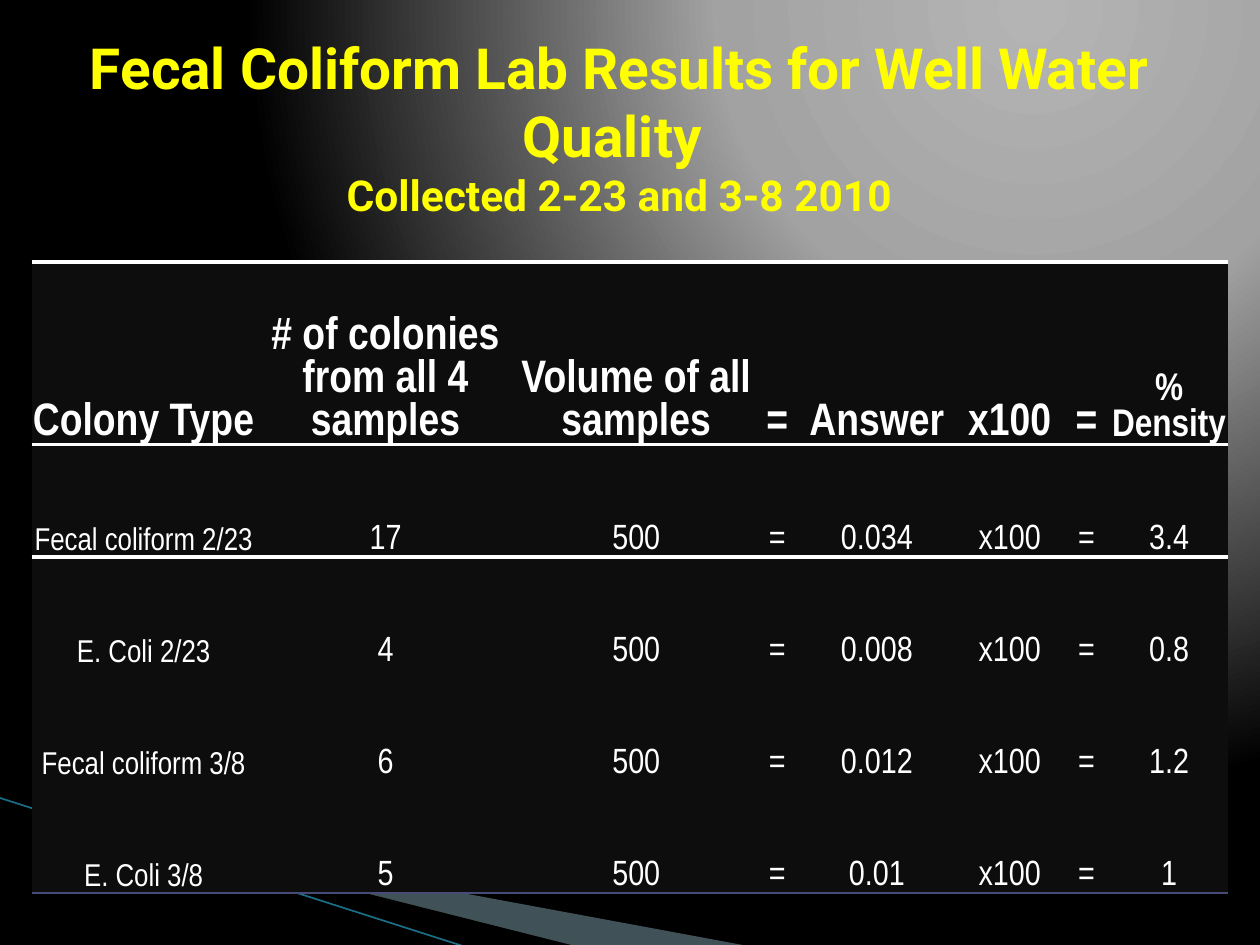
import pptx
import pptx.dml.color
import pptx.enum.text
import pptx.oxml
import pptx.oxml.ns
import pptx.util
from dataclasses import dataclass
from lxml import etree
from pptx.util import Inches


@dataclass(frozen=True)
class Theme:
    title: str = "FFFF00"
    text: str = "FFFFFF"
    cell: str = "0D0D0D"
    table_edge: str = "474B78"
    swoosh: str = "A0CBDC"
    shade: str = "000000"
    thin_line: str = "1A6F86"
    title_font: str = "Roboto"
    table_font: str = "Arial Narrow"
    title_size: float = 32.4
    subtitle_size: float = 24.3
    header_size: int = 26
    density_size: int = 22
    label_size: int = 18
    value_size: int = 20


theme = Theme()
rgb = pptx.dml.color.RGBColor.from_string
qn = pptx.oxml.ns.qn
NAMESPACE = pptx.oxml.ns.nsdecls("a")


def set_border(cell, side, line):
    """Draw one side (L, R, T or B) as (colour, points), or hide it if line is None."""
    if line:
        color, points = line
        width = pptx.util.Pt(points)
        fill = f'<a:solidFill><a:srgbClr val="{color}"/></a:solidFill>'
    else:
        width, fill = 0, "<a:noFill/>"
    return pptx.oxml.parse_xml(f'<a:ln{side} {NAMESPACE} w="{width}">{fill}</a:ln{side}>')


presentation = pptx.Presentation()
presentation.slide_width = Inches(10)
presentation.slide_height = Inches(7.5)
slide = presentation.slides.add_slide(presentation.slide_layouts[6])

# Background: radial gradient centred near the top right
slide.background.fill.gradient()
gradient = slide.background.fill._fill._gradFill
for child in list(gradient):
    gradient.remove(child)
stops = etree.SubElement(gradient, qn("a:gsLst"))
for percent, color in [(0, "B4B4B4"), (40, "A2A2A2"), (100, "000000")]:
    stop = etree.SubElement(stops, qn("a:gs"), pos=str(percent * 1000))
    etree.SubElement(stop, qn("a:srgbClr"), val=color)
focus = etree.SubElement(gradient, qn("a:path"), {"path": "circle"})
etree.SubElement(focus, qn("a:fillToRect"), l="65000", t="0", r="0", b="98000")

# Swooshes in the bottom left corner
swooshes = [
    ([(0.55, 6.51), (5.95, 7.51), (4.56, 7.51), (0.55, 6.5)], theme.swoosh, 40),
    ([(0.53, 6.49), (4.57, 7.51), (3.72, 7.52), (0.54, 6.5)], theme.shade, 100),
]
for points, color, opacity in swooshes:
    corners = [(Inches(x), Inches(y)) for x, y in points]
    builder = slide.shapes.build_freeform(*corners[0])
    builder.add_line_segments(corners[1:], close=True)
    shape = builder.convert_to_shape()
    shape.shadow.inherit = False
    shape.fill.solid()
    shape.fill.fore_color.rgb = rgb(color)
    shape.line.fill.background()
    if opacity < 100:
        swatch = shape._element.spPr.find(".//" + qn("a:srgbClr"))
        etree.SubElement(swatch, qn("a:alpha"), val=str(opacity * 1000))

connector = slide.shapes.add_connector(
    pptx.enum.shapes.MSO_CONNECTOR.STRAIGHT,
    Inches(-0.01), Inches(6.33), Inches(3.71), Inches(7.52))
connector.line.color.rgb = rgb(theme.thin_line)
connector.line.width = pptx.util.Pt(0.95)
etree.SubElement(connector._element.spPr, qn("a:effectLst"))

# Title
title = slide.shapes.add_textbox(Inches(0.33), Inches(0.25), Inches(9.17), Inches(1.5))
frame = title.text_frame
frame.word_wrap = True
frame.vertical_anchor = pptx.enum.text.MSO_ANCHOR.MIDDLE
paragraph = frame.paragraphs[0]
paragraph.alignment = pptx.enum.text.PP_ALIGN.CENTER
title_lines = [
    ("Fecal Coliform Lab Results for Well Water Quality ", theme.title_size),
    ("Collected 2-23 and 3-8 2010", theme.subtitle_size),
]
for index, (text, size) in enumerate(title_lines):
    if index:
        paragraph.add_line_break()
    run = paragraph.add_run()
    run.text = text
    run.font.name = theme.title_font
    run.font.size = pptx.util.Pt(size)
    run.font.bold = True
    run.font.color.rgb = rgb(theme.title)
    run.font._element.insert(0, pptx.oxml.parse_xml(
        f'<a:ln {NAMESPACE} w="{pptx.util.Pt(0.75)}"><a:solidFill>'
        f'<a:srgbClr val="{theme.title}"/></a:solidFill></a:ln>'))

# Results table
headers = ["Colony Type", "# of colonies from all 4 samples", "Volume of all samples",
           "=", "Answer", "x100", "=", "% Density"]
results = [
    ("Fecal coliform 2/23", "17", "0.034", "3.4"),
    ("E. Coli 2/23", "4", "0.008", "0.8"),
    ("Fecal coliform 3/8", "6", "0.012", "1.2"),
    ("E. Coli 3/8", "5", "0.01", "1"),
]
rows = [headers] + [
    [colony, count, "500", "=", answer, "x100", "=", density]
    for colony, count, answer, density in results]
column_widths = [1.78, 2.06, 1.92, 0.32, 1.26, 0.85, 0.37, 0.94]
row_heights = [1.45] + [0.89] * len(results)

# Horizontal rules, numbered from the top edge of the table
white_rule = (theme.text, 2.25)
rules = {0: white_rule, 1: white_rule, 2: white_rule, len(rows): (theme.table_edge, 1)}

table = slide.shapes.add_table(
    len(rows), len(headers), Inches(0.25), Inches(2.08), Inches(9.5), Inches(5)).table
table.horz_banding = False
for column, width in zip(table.columns, column_widths):
    column.width = Inches(width)
for row, height in zip(table.rows, row_heights):
    row.height = Inches(height)

for row_index, texts in enumerate(rows):
    for column_index, text in enumerate(texts):
        cell = table.cell(row_index, column_index)
        cell.margin_left = cell.margin_right = cell.margin_top = cell.margin_bottom = 0
        cell.vertical_anchor = pptx.enum.text.MSO_ANCHOR.BOTTOM
        is_header = row_index == 0
        if is_header:
            size = theme.density_size if text == headers[-1] else theme.header_size
        else:
            size = theme.label_size if column_index == 0 else theme.value_size
        cell.text = text
        paragraph = cell.text_frame.paragraphs[0]
        paragraph.alignment = pptx.enum.text.PP_ALIGN.CENTER
        paragraph.font.name = theme.table_font
        paragraph.font.size = pptx.util.Pt(size)
        paragraph.font.bold = is_header
        paragraph.font.color.rgb = rgb(theme.text)

        borders = {"L": None, "R": None,
                   "T": rules.get(row_index), "B": rules.get(row_index + 1)}
        properties = cell._tc.get_or_add_tcPr()
        for side, line in borders.items():
            properties.append(set_border(cell, side, line))
        cell.fill.solid()
        cell.fill.fore_color.rgb = rgb(theme.cell)

presentation.save("out.pptx")
